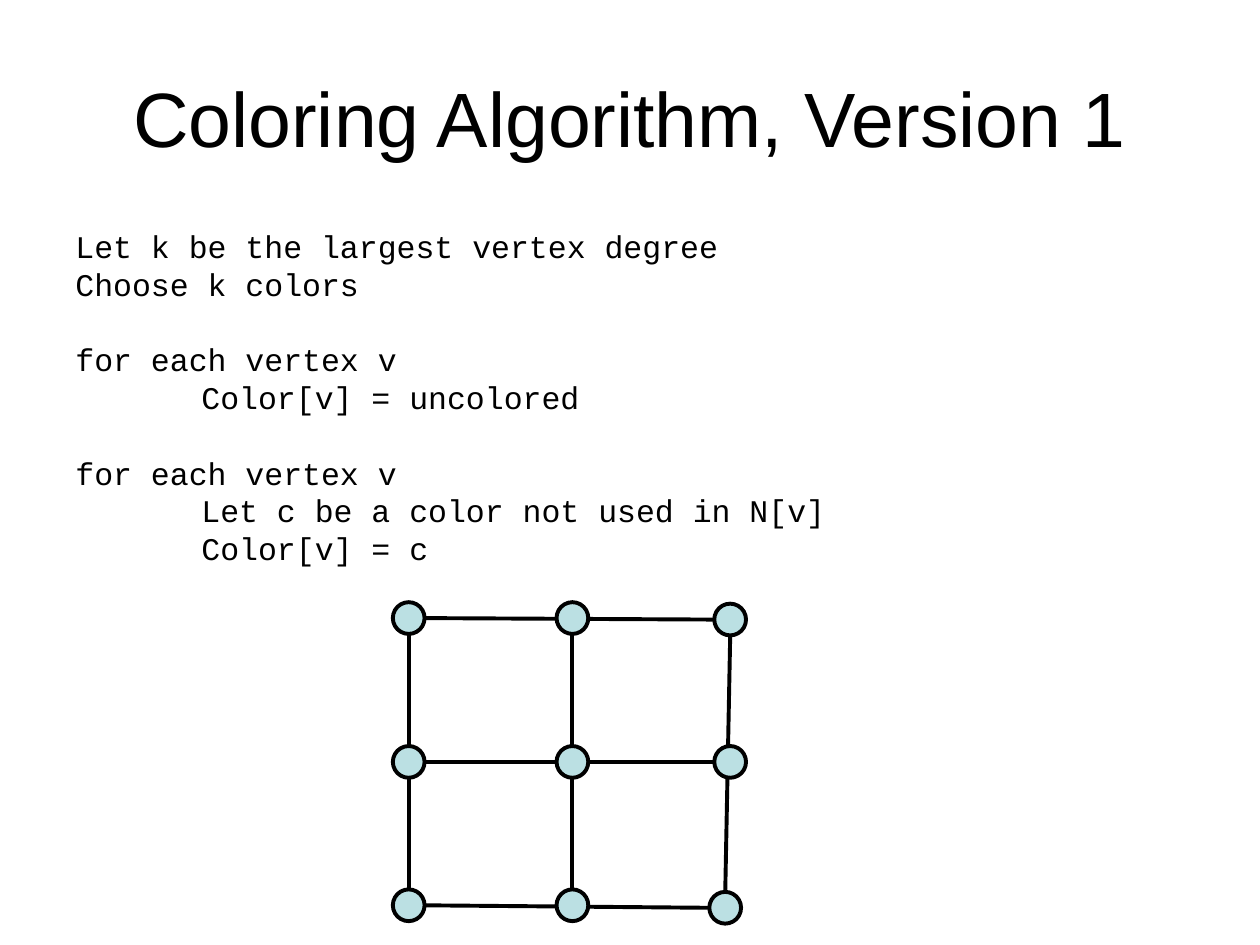
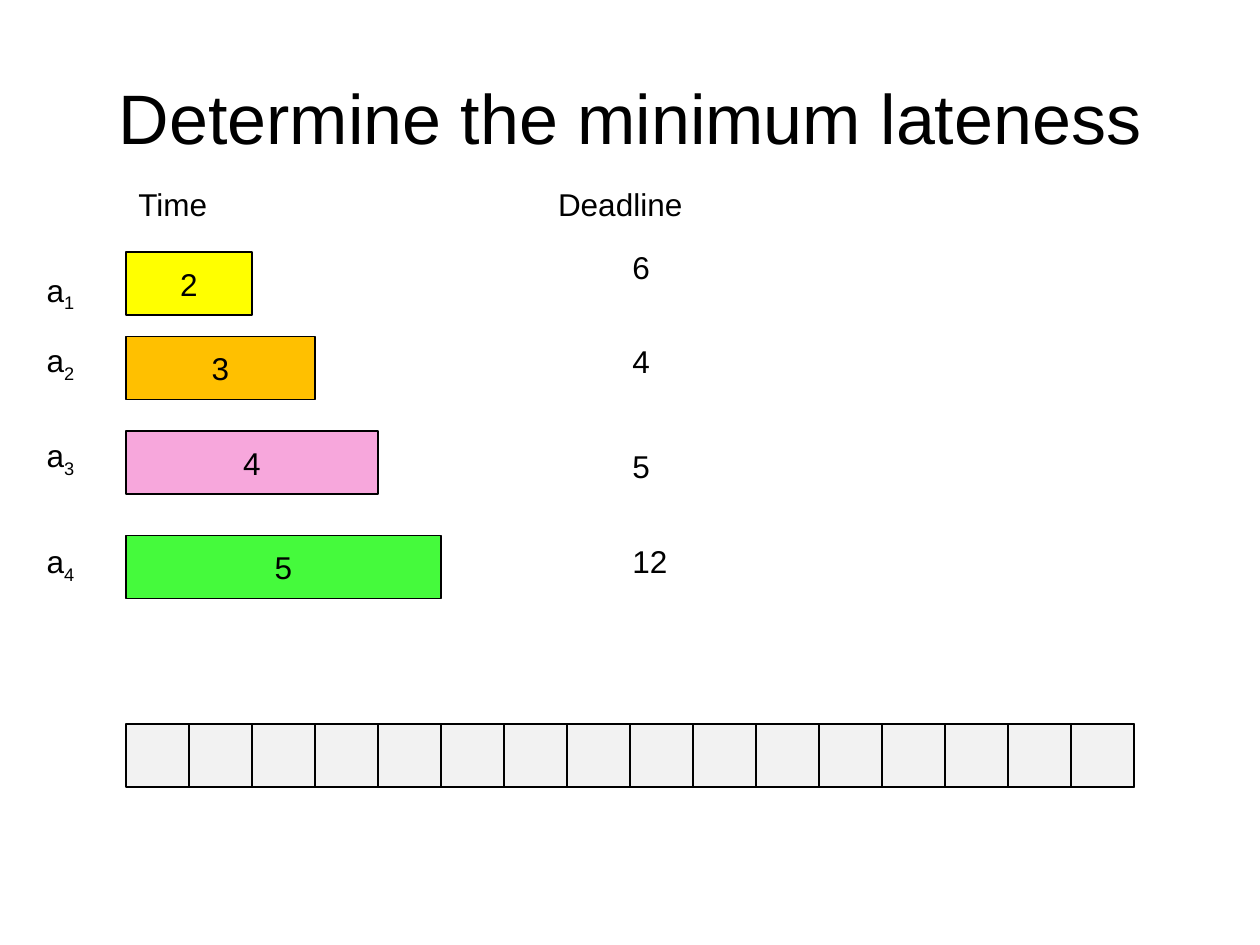
"""Build two lecture slides: a greedy colouring algorithm and a minimum lateness exercise."""
import pptx
import pptx.dml.color
import pptx.enum.shapes
import pptx.enum.text
import pptx.oxml.ns
import pptx.oxml.xmlchemy
import pptx.util

Cm, Pt = pptx.util.Cm, pptx.util.Pt
SHAPES = pptx.enum.shapes.MSO_SHAPE
ALIGN = pptx.enum.text.PP_ALIGN
ANCHOR = pptx.enum.text.MSO_ANCHOR

BLACK, VERTEX_FILL, SLOT_FILL = "000000", "BBE0E3", "F2F2F2"
PROSE = {"name": "Arial", "size": Pt(18)}
CODE = {"name": "Courier New", "size": Pt(18)}
CODE_LEADING = Pt(21.6)
CODE_INDENT = Cm(2.54)

COLORING_TITLE = ("Coloring Algorithm, Version 1", 44)
COLORING_BLOCKS = [
    [(0, "Let k be the largest vertex degree"), (0, "Choose k colors")],
    [(0, "for each vertex v"), (1, "Color[v] = uncolored")],
    [(0, "for each vertex v"),
     (1, "Let c be a color not used in N[v]"),
     (1, "Color[v] = c")],
]
VERTEX_COLUMNS = [8.24, 11.54, 14.72]
VERTEX_ROWS = [12.46, 15.36, 18.25]
VERTEX_NUDGES = {(2, 0): (0, 0.03), (2, 2): (-0.1, 0.05)}
RADIUS = 0.32

LATENESS_TITLE = ("Determine the minimum lateness", 40)
HEADINGS = [("Time", 2.54), ("Deadline", 11)]
HEADING_TOP = 3.61
# Each job: time, deadline, bar colour, then tops of bar, deadline and name.
JOBS = [
    (2, 6, "FFFF00", 5.08, 4.88, 5.33),
    (3, 4, "FFC000", 6.78, 6.78, 6.76),
    (4, 5, "F7A7DC", 8.69, 8.89, 8.66),
    (5, 12, "45FA3C", 10.8, 10.8, 10.8),
]
UNIT = 1.27
CHART_LEFT, NAME_LEFT, DEADLINE_LEFT = 2.54, 0.69, 12.5
SLOT_COUNT, SLOT_TOP = 16, 14.6


def color(code):
    """Turn a hex string into a colour."""
    return pptx.dml.color.RGBColor.from_string(code)


def apply(target, values):
    """Set every attribute named in values on target."""
    for name, value in values.items():
        setattr(target, name, value)


def write(para, text, font):
    """Add a black span of text to a paragraph."""
    span = para.add_run()
    span.text = text
    apply(span.font, font)
    span.font.color.rgb = color(BLACK)
    return span


def add_page(deck, title):
    """Add a page with a centred title."""
    text, size = title
    page = deck.slides.add_slide(deck.slide_layouts[5])
    heading = page.shapes.title
    apply(heading, {"left": Cm(1.27), "top": Cm(0.76),
                    "width": Cm(22.86), "height": Cm(3.18)})
    heading.text_frame.vertical_anchor = ANCHOR.MIDDLE
    para = heading.text_frame.paragraphs[0]
    para.alignment = ALIGN.CENTER
    write(para, text, {"name": "Arial", "size": Pt(size)})
    return page


def add_box(page, left, top, width, height=1.02):
    """Add a wrapping text box and return its frame."""
    box = page.shapes.add_textbox(Cm(left), Cm(top), Cm(width), Cm(height))
    box.text_frame.word_wrap = True
    return box.text_frame


def add_label(page, text, left, top, width):
    """Add a one-line label and return its paragraph."""
    para = add_box(page, left, top, width).paragraphs[0]
    write(para, text, PROSE)
    return para


def add_figure(page, kind, place, fill, weight):
    """Add a filled shape with a black outline."""
    figure = page.shapes.add_shape(kind, *map(Cm, place))
    figure.shadow.inherit = False
    figure.fill.solid()
    figure.fill.fore_color.rgb = color(fill)
    figure.line.color.rgb = color(BLACK)
    figure.line.width = Pt(weight)
    return figure


def add_edge(page, start, end):
    """Draw a straight black edge between two points."""
    edge = page.shapes.add_connector(
        pptx.enum.shapes.MSO_CONNECTOR.STRAIGHT, *map(Cm, start + end))
    edge.line.color.rgb = color(BLACK)
    edge.line.width = Pt(2.25)
    properties = edge._element.spPr
    properties.append(properties.makeelement(pptx.oxml.ns.qn("a:effectLst"), {}))


def add_code(page):
    """Write the pseudocode with a line of space between blocks."""
    frame = add_box(page, 1.27, 4.45, 22.43, 7.19)
    para = frame.paragraphs[0]
    for block_index, block in enumerate(COLORING_BLOCKS):
        for line_index, (level, text) in enumerate(block):
            if block_index or line_index:
                para = frame.add_paragraph()
            para.line_spacing = CODE_LEADING
            if block_index and not line_index:
                para.space_before = CODE_LEADING
            if level:
                para._p.get_or_add_pPr().set("marL", str(level * CODE_INDENT))
            write(para, text, CODE)


def add_graph(page):
    """Draw the three by three grid graph."""
    centers = {}
    for column, x in enumerate(VERTEX_COLUMNS):
        for row, y in enumerate(VERTEX_ROWS):
            shift_x, shift_y = VERTEX_NUDGES.get((column, row), (0, 0))
            centers[column, row] = (x + shift_x, y + shift_y)
    for index in range(3):
        (left, left_y), (right, right_y) = centers[0, index], centers[2, index]
        add_edge(page, (left + RADIUS, left_y), (right - RADIUS, right_y))
        (top_x, top), (bottom_x, bottom) = centers[index, 0], centers[index, 2]
        add_edge(page, (top_x, top + RADIUS), (bottom_x, bottom - RADIUS))
    for x, y in centers.values():
        place = (x - RADIUS, y - RADIUS, 2 * RADIUS, 2 * RADIUS)
        add_figure(page, SHAPES.OVAL, place, VERTEX_FILL, 2.25)


def add_jobs(page):
    """Draw each job's name, time bar and deadline."""
    for text, left in HEADINGS:
        add_label(page, text, left, HEADING_TOP, 4.88)
    for number, job in enumerate(JOBS, 1):
        time, deadline, fill, bar_top, deadline_top, name_top = job
        bar = add_figure(page, SHAPES.RECTANGLE,
                         (CHART_LEFT, bar_top, time * UNIT, UNIT), fill, 0.75)
        bar.text_frame.vertical_anchor = ANCHOR.MIDDLE
        bar.text_frame.word_wrap = False
        para = bar.text_frame.paragraphs[0]
        para.alignment = ALIGN.CENTER
        write(para, str(time), PROSE)
        add_label(page, str(deadline), DEADLINE_LEFT, deadline_top, 1.5)
        name = add_label(page, "a", NAME_LEFT, name_top, 1.68)
        subscript = write(name, str(number), PROSE)
        subscript.font._element.set("baseline", "-25000")


def add_timeline(page):
    """Draw the empty schedule, every second slot over one long strip."""
    strip = (CHART_LEFT, SLOT_TOP, SLOT_COUNT * UNIT, UNIT)
    slots = [(CHART_LEFT + slot * UNIT, SLOT_TOP, UNIT, UNIT)
             for slot in range(1, SLOT_COUNT, 2)]
    for place in [strip] + slots:
        add_figure(page, SHAPES.RECTANGLE, place, SLOT_FILL, 1)


def main():
    """Build and save the deck."""
    deck = pptx.Presentation()
    apply(deck, {"slide_width": Cm(25.4), "slide_height": Cm(19.05)})
    coloring = add_page(deck, COLORING_TITLE)
    add_code(coloring)
    add_graph(coloring)
    lateness = add_page(deck, LATENESS_TITLE)
    add_jobs(lateness)
    add_timeline(lateness)
    deck.save("out.pptx")


if __name__ == "__main__":
    main()
